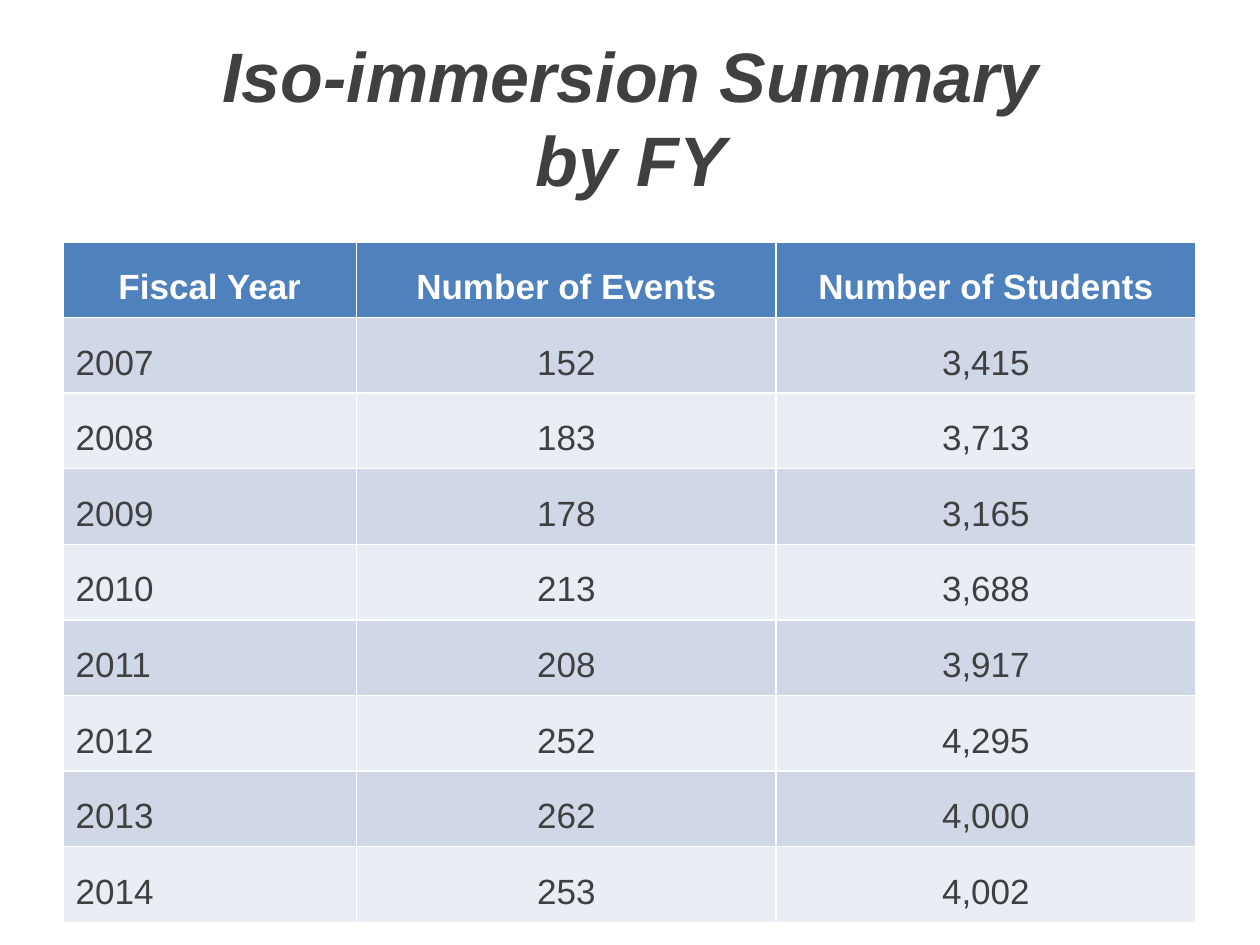
"""Build the Iso-immersion summary slide: a title above a table by fiscal year."""
from dataclasses import dataclass

from pptx import Presentation
from pptx.dml.color import RGBColor
from pptx.enum.text import MSO_ANCHOR, MSO_AUTO_SIZE, PP_ALIGN
from pptx.util import Inches, Pt

LEFT, CENTER = PP_ALIGN.LEFT, PP_ALIGN.CENTER
MIDDLE = MSO_ANCHOR.MIDDLE
NO_AUTOFIT = MSO_AUTO_SIZE.NONE
TITLE_ONLY = 5


@dataclass(frozen=True)
class Theme:
    font: str = "Arial"
    ink: str = "404040"
    white: str = "FFFFFF"
    header: str = "4F81BD"
    bands: tuple = ("D0D8E8", "E9EDF4")
    title_size: int = 40
    table_size: int = 20


THEME = Theme()


def write(frame, text, *, size, color=THEME.ink, bold=False, italic=False,
          align=CENTER, spacing=None):
    paragraph = frame.paragraphs[0]
    paragraph.text = text
    paragraph.alignment = align
    paragraph.line_spacing = spacing
    for run in paragraph.runs:
        run.font.name = THEME.font
        run.font.size = Pt(size)
        run.font.bold = bold
        run.font.italic = italic
        run.font.color.rgb = RGBColor.from_string(color)


headings = ("Fiscal Year", "Number of Events", "Number of Students")
years = (
    ("2007", "152", "3,415"),
    ("2008", "183", "3,713"),
    ("2009", "178", "3,165"),
    ("2010", "213", "3,688"),
    ("2011", "208", "3,917"),
    ("2012", "252", "4,295"),
    ("2013", "262", "4,000"),
    ("2014", "253", "4,002"),
)

deck = Presentation()
deck.slide_width, deck.slide_height = Inches(10), Inches(7.5)
slide = deck.slides.add_slide(deck.slide_layouts[TITLE_ONLY])

title = slide.shapes.title
title.left, title.top = Inches(0.92), Inches(0.3)
title.width, title.height = Inches(8.17), Inches(1.25)
title.text_frame.auto_size = NO_AUTOFIT
title.text_frame.vertical_anchor = MIDDLE
write(title.text_frame, "Iso-immersion Summary\vby FY",
      size=THEME.title_size, bold=True, italic=True)

row_height = Inches(0.6)
column_widths = (Inches(2.33), Inches(3.33), Inches(3.33))
summary_rows = (headings, *years)
summary = slide.shapes.add_table(
    len(summary_rows), len(headings), Inches(0.5), Inches(1.92),
    sum(column_widths), row_height * len(summary_rows)).table
for column, width in zip(summary.columns, column_widths):
    column.width = width

for row_index, values in enumerate(summary_rows):
    is_header = row_index == 0
    fill = THEME.header if is_header else THEME.bands[(row_index - 1) % 2]
    for column_index, value in enumerate(values):
        cell = summary.cell(row_index, column_index)
        cell.fill.solid()
        cell.fill.fore_color.rgb = RGBColor.from_string(fill)
        write(cell.text_frame, value, size=THEME.table_size, spacing=1.5,
              color=THEME.white if is_header else THEME.ink, bold=is_header,
              align=CENTER if is_header or column_index else LEFT)

deck.save("out.pptx")
